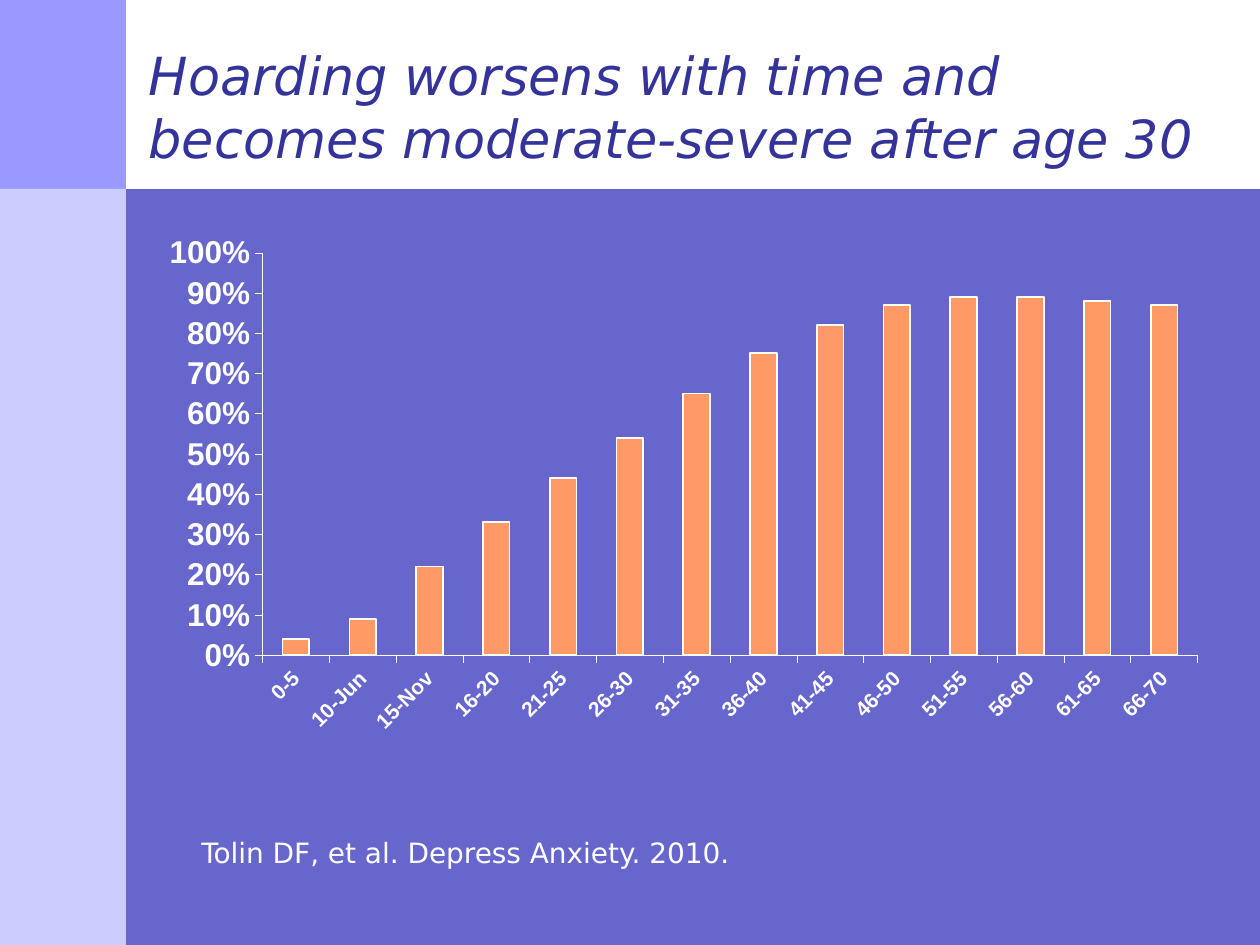
from lxml import etree
from pptx import Presentation
from pptx.chart.data import CategoryChartData
from pptx.dml.color import RGBColor
from pptx.enum.chart import XL_CHART_TYPE, XL_TICK_MARK
from pptx.enum.shapes import MSO_SHAPE
from pptx.enum.text import MSO_ANCHOR, PP_ALIGN
from pptx.oxml import parse_xml
from pptx.oxml.ns import nsdecls, qn
from pptx.util import Inches, Pt

COLORS = {"ground": "6666CC", "white": "FFFFFF", "corner": "9999FF",
          "side": "CCCCFF", "title": "333399", "bar": "FF9966"}
TITLE = "Hoarding worsens with time and\vbecomes moderate-severe after age 30"
CITATION = "Tolin DF, et al. Depress Anxiety. 2010."
SHARES = {"0-5": 0.04, "10-Jun": 0.09, "15-Nov": 0.22, "16-20": 0.33,
          "21-25": 0.44, "26-30": 0.54, "31-35": 0.65, "36-40": 0.75,
          "41-45": 0.82, "46-50": 0.87, "51-55": 0.89, "56-60": 0.89,
          "61-65": 0.88, "66-70": 0.87}
PANELS = [("white", 0, 0, 10, 1.5), ("corner", 0, 0, 1, 1.5), ("side", 0, 1.5, 1, 6)]
PLOT = {"x": 0.118, "y": 0.072, "w": 0.872, "h": 0.684}


def color(key):
    return RGBColor.from_string(COLORS[key])


def apply(target, formats):
    for key, value in formats.items():
        setattr(target, key, value)


def set_font(font, tint, **formats):
    apply(font, formats)
    font.color.rgb = color(tint)


def write(box, text, tint, top_margin, **formats):
    frame = box.text_frame
    apply(frame, {"text": text, "word_wrap": True, "vertical_anchor": MSO_ANCHOR.TOP,
                  "margin_top": Inches(top_margin)})
    for para in frame.paragraphs:
        apply(para, {"alignment": PP_ALIGN.LEFT, "line_spacing": 1.0})
        for span in para.runs:
            set_font(span.font, tint, name="DejaVu Sans", **formats)


def style_axis(axis, size):
    apply(axis, {"has_major_gridlines": False, "major_tick_mark": XL_TICK_MARK.OUTSIDE,
                 "minor_tick_mark": XL_TICK_MARK.NONE})
    axis.format.line.color.rgb = color("white")
    axis.format.line.width = Pt(0.25)
    set_font(axis.tick_labels.font, "white", name="Arial", size=Pt(size), bold=True)


def slant_categories(chart):
    body = chart.element.find(f".//{qn('c:catAx')}/{qn('c:txPr')}/{qn('a:bodyPr')}")
    body.set("rot", "-2700000")
    body.set("vert", "horz")


def place_plot(chart):
    area = chart.element.find(f".//{qn('c:plotArea')}")
    for layout in area.findall(qn("c:layout")):
        area.remove(layout)
    layout = parse_xml(f'<c:layout {nsdecls("c")}><c:manualLayout/></c:layout>')
    entries = {"layoutTarget": "inner", "xMode": "edge", "yMode": "edge", **PLOT}
    for tag, value in entries.items():
        etree.SubElement(layout[0], qn(f"c:{tag}")).set("val", str(value))
    area.insert(0, layout)


def add_share_chart(page):
    data = CategoryChartData(number_format="0%")
    data.categories = list(SHARES)
    data.add_series("Series 1", list(SHARES.values()))
    frame = page.shapes.add_chart(XL_CHART_TYPE.COLUMN_CLUSTERED, Inches(1.08),
                                  Inches(1.67), Inches(8.51), Inches(4.67), data)
    chart = frame.chart
    apply(chart, {"has_legend": False, "has_title": False})
    set_font(chart.font, "white", name="Arial", size=Pt(18), bold=True)
    style_axis(chart.category_axis, 12)
    slant_categories(chart)
    style_axis(chart.value_axis, 18)
    apply(chart.value_axis, {"minimum_scale": 0, "maximum_scale": 1, "major_unit": 0.1})
    apply(chart.value_axis.tick_labels,
          {"number_format": "0%", "number_format_is_linked": False})
    plot = chart.plots[0]
    apply(plot, {"gap_width": 150, "vary_by_categories": False})
    bars = plot.series[0]
    bars.invert_if_negative = False
    bars.format.fill.solid()
    bars.format.fill.fore_color.rgb = color("bar")
    bars.format.line.color.rgb = color("white")
    bars.format.line.width = Pt(1)
    place_plot(chart)


def main():
    """Build the slide on hoarding severity by age."""
    deck = Presentation()
    apply(deck, {"slide_width": Inches(10), "slide_height": Inches(7.5)})
    page = deck.slides.add_slide(deck.slide_layouts[5])
    page.background.fill.solid()
    page.background.fill.fore_color.rgb = color("ground")
    for tint, *place in PANELS:
        panel = page.shapes.add_shape(MSO_SHAPE.RECTANGLE, *map(Inches, place))
        panel.shadow.inherit = False
        panel.fill.solid()
        panel.fill.fore_color.rgb = color(tint)
        panel.line.fill.background()
    title = page.shapes.title
    title.element.getparent().append(title.element)
    apply(title, {"left": Inches(1.08), "top": Inches(0.25),
                  "width": Inches(8.67), "height": Inches(1.25)})
    write(title, TITLE, "title", 0.09, size=Pt(30), italic=True)
    add_share_chart(page)
    citation = page.shapes.add_textbox(Inches(1.5), Inches(6.58), Inches(6.58), Inches(0.67))
    write(citation, CITATION, "white", 0.05, size=Pt(16))
    deck.save("out.pptx")


if __name__ == "__main__":
    main()
